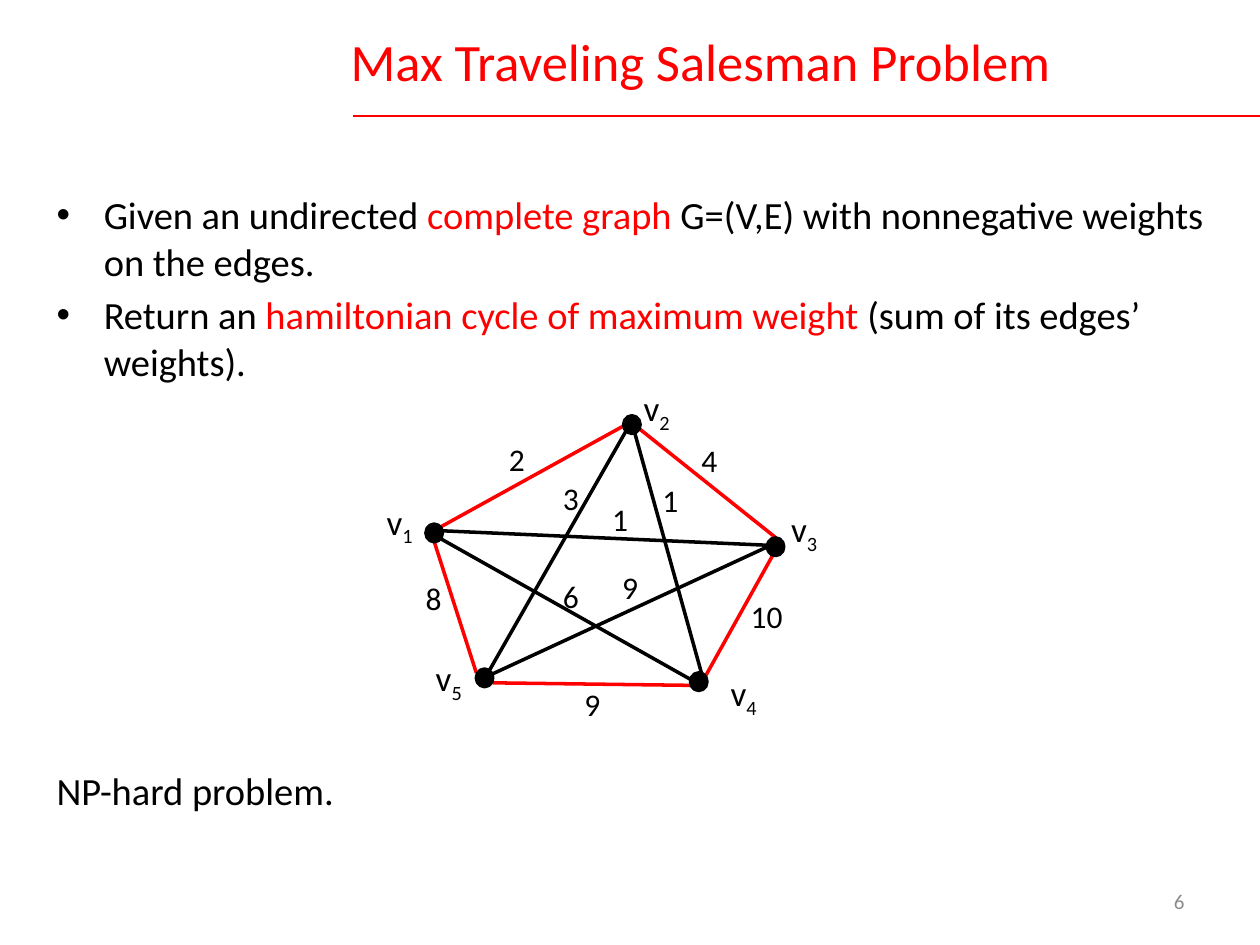
from dataclasses import dataclass

from lxml.etree import SubElement
from pptx import Presentation
from pptx.dml.color import RGBColor
from pptx.enum.shapes import MSO_CONNECTOR as Connector, MSO_SHAPE as Preset
from pptx.enum.text import MSO_ANCHOR as Anchor, PP_ALIGN as Align
from pptx.oxml.ns import qn
from pptx.util import Pt

FONT = "Calibri"
RED, BLACK, GRAY = "FF0000", "000000", "8C8C8C"
Point = tuple[float, float]


@dataclass
class Vertex:
    index: str
    corner: Point
    label_at: Point


@dataclass
class Edge:
    start: Point
    end: Point
    weight: str
    weight_at: Point
    color: str = BLACK


VERTICES = [
    Vertex("1", (243.4, 299.5), (213.8, 282.2)),
    Vertex("2", (356.4, 237.6), (360.7, 217.4)),
    Vertex("3", (438.5, 307.4), (445, 286.6)),
    Vertex("4", (394.6, 384.5), (410.4, 380.2)),
    Vertex("5", (272.2, 382.3), (241.9, 371.5)),
]

EDGES = [
    # Hamiltonian cycle
    Edge((364.3, 239), (252, 301), "2", (283.7, 247.7), RED),
    Edge((357.8, 239), (443.5, 307.4), "4", (393.8, 248.4), RED),
    Edge((401, 390.2), (443.5, 313.9), "10", (421.9, 337.7), RED),
    Edge((399.6, 391.7), (281.5, 390.2), "9", (326.9, 388.1), RED),
    Edge((272.2, 384.5), (247.7, 308.2), "8", (236.2, 327.6), RED),
    # Diagonals
    Edge((443.5, 311.8), (247.7, 303.1), "1", (342.7, 282.2)),
    Edge((243.4, 303.1), (403.2, 393.1), "6", (314.6, 326.2)),
    Edge((361.4, 242.6), (403.2, 393.1), "1", (371.5, 271.4)),
    Edge((357.8, 246.2), (277.2, 387.4), "3", (314.6, 270)),
    Edge((276.5, 387.4), (438.5, 312.5), "9", (348.5, 321.1)),
]

BULLETS = [
    [("Given an undirected ", BLACK), ("complete graph ", RED),
     ("G=(V,E) with nonnegative weights on the edges.", BLACK)],
    [("Return an ", BLACK), ("hamiltonian cycle of maximum weight ", RED),
     ("(sum of its edges’ weights).", BLACK)],
]


def rgb(color: str) -> RGBColor:
    return RGBColor.from_string(color)


def set_font(para, size: float, color: str) -> None:
    para.font.name, para.font.size = FONT, Pt(size)
    para.font.color.rgb = rgb(color)


def add_box(page, at: Point, width: float, height: float, wrap: bool = True):
    box = page.shapes.add_textbox(Pt(at[0]), Pt(at[1]), Pt(width), Pt(height))
    box.text_frame.word_wrap = wrap
    return box.text_frame


def add_line(page, start: Point, end: Point, color: str, width: float) -> None:
    line = page.shapes.add_connector(
        Connector.STRAIGHT, *(Pt(value) for value in start + end))
    line.line.color.rgb = rgb(color)
    line.line.width = Pt(width)
    SubElement(line._element.spPr, qn("a:effectLst"))


def add_bullet(para) -> None:
    properties = para._p.get_or_add_pPr()
    properties.set("marL", str(Pt(27)))
    properties.set("indent", str(Pt(-27)))
    SubElement(properties, qn("a:buFont"), typeface="Arial")
    SubElement(properties, qn("a:buChar"), char="•")


def add_title(page) -> None:
    title = page.shapes.title
    title.left, title.top, title.width, title.height = map(Pt, (36, -2.2, 648, 73.4))
    frame = title.text_frame
    frame.text = "Max Traveling Salesman Problem"
    frame.vertical_anchor = Anchor.MIDDLE
    frame.margin_left = Pt(88)
    frame.paragraphs[0].alignment = Align.CENTER
    set_font(frame.paragraphs[0], 30, RED)
    add_line(page, (201.6, 66.2), (720, 66.2), RED, 1.25)


def add_body(page) -> None:
    frame = add_box(page, (25.2, 105.8), 686, 397)
    for number, parts in enumerate(BULLETS):
        para = frame.add_paragraph() if number else frame.paragraphs[0]
        para.space_before = Pt(4.4 if number else 0)
        add_bullet(para)
        set_font(para, 22, BLACK)
        for text, color in parts:
            span = para.add_run()
            span.text = text
            span.font.color.rgb = rgb(color)
    # Closing remark, below the graph
    para = frame.add_paragraph()
    para.text = "NP-hard problem."
    para.space_before = Pt(219)
    set_font(para, 22, BLACK)


def add_edge(page, edge: Edge) -> None:
    add_line(page, edge.start, edge.end, edge.color, 2)
    width = 16 + 9 * len(edge.weight)
    para = add_box(page, edge.weight_at, width, 28.8, wrap=False).paragraphs[0]
    para.text = edge.weight
    set_font(para, 18, BLACK)


def add_vertex(page, vertex: Vertex) -> None:
    left, top = vertex.corner
    dot = page.shapes.add_shape(
        Preset.FLOWCHART_CONNECTOR, Pt(left), Pt(top), Pt(9.4), Pt(10.1))
    dot.shadow.inherit = False
    dot.fill.solid()
    dot.fill.fore_color.rgb = dot.line.color.rgb = rgb(BLACK)
    dot.line.width = Pt(2)
    para = add_box(page, vertex.label_at, 49.7, 31.7).paragraphs[0]
    set_font(para, 20, BLACK)
    para.add_run().text = "v"
    subscript = para.add_run()
    subscript.text = vertex.index
    subscript.font._element.set("baseline", "-25000")


def add_page_number(page) -> None:
    frame = add_box(page, (516.2, 500.4), 167.8, 28.8)
    frame.vertical_anchor = Anchor.MIDDLE
    para = frame.paragraphs[0]
    para.text = "6"
    para.alignment = Align.RIGHT
    set_font(para, 12, GRAY)


def main() -> None:
    deck = Presentation()
    deck.slide_width, deck.slide_height = Pt(720), Pt(540)
    page = deck.slides.add_slide(deck.slide_layouts.get_by_name("Title Only"))
    add_title(page)
    add_body(page)
    for edge in EDGES:
        add_edge(page, edge)
    for vertex in VERTICES:
        add_vertex(page, vertex)
    add_page_number(page)
    deck.save("out.pptx")


if __name__ == "__main__":
    main()
